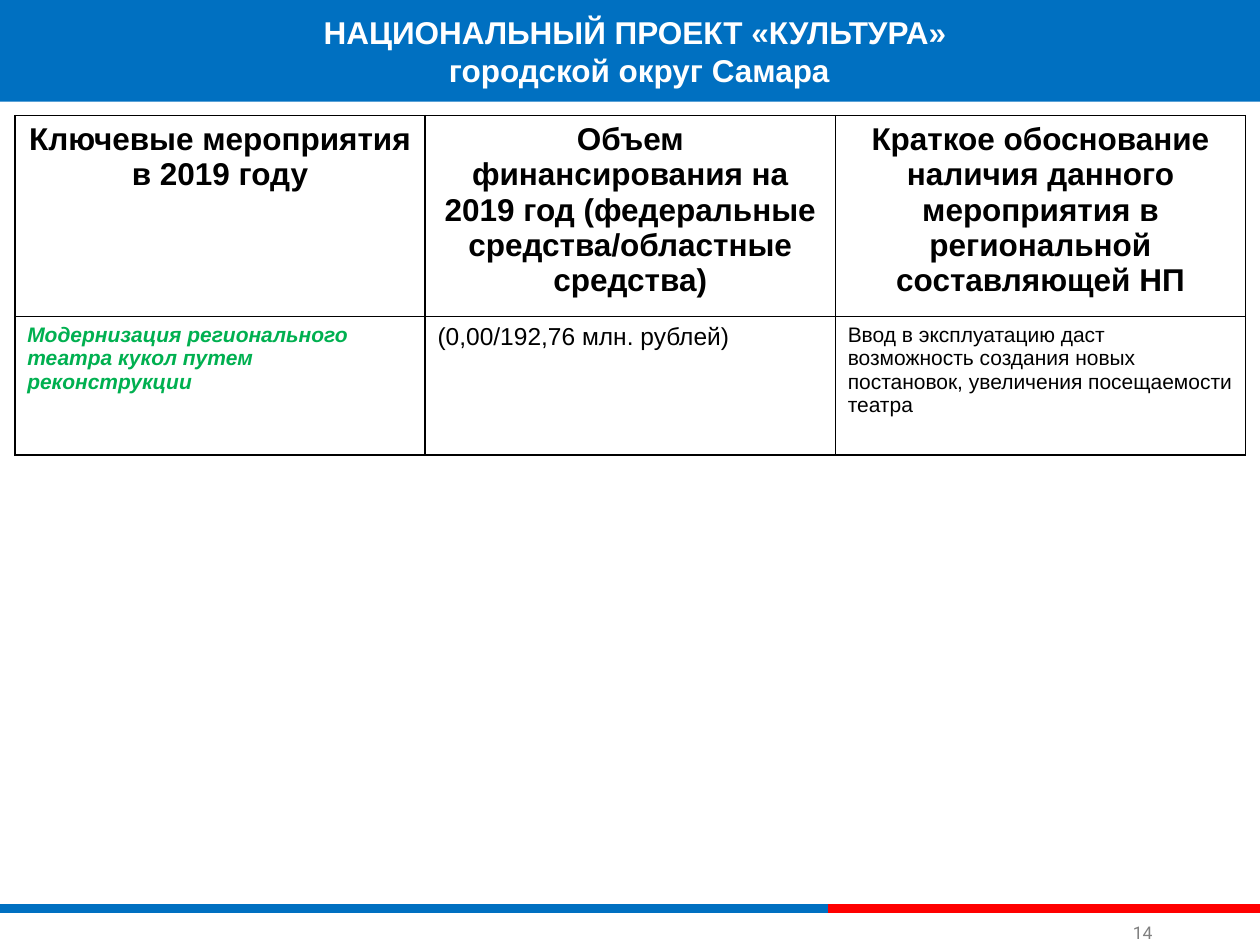
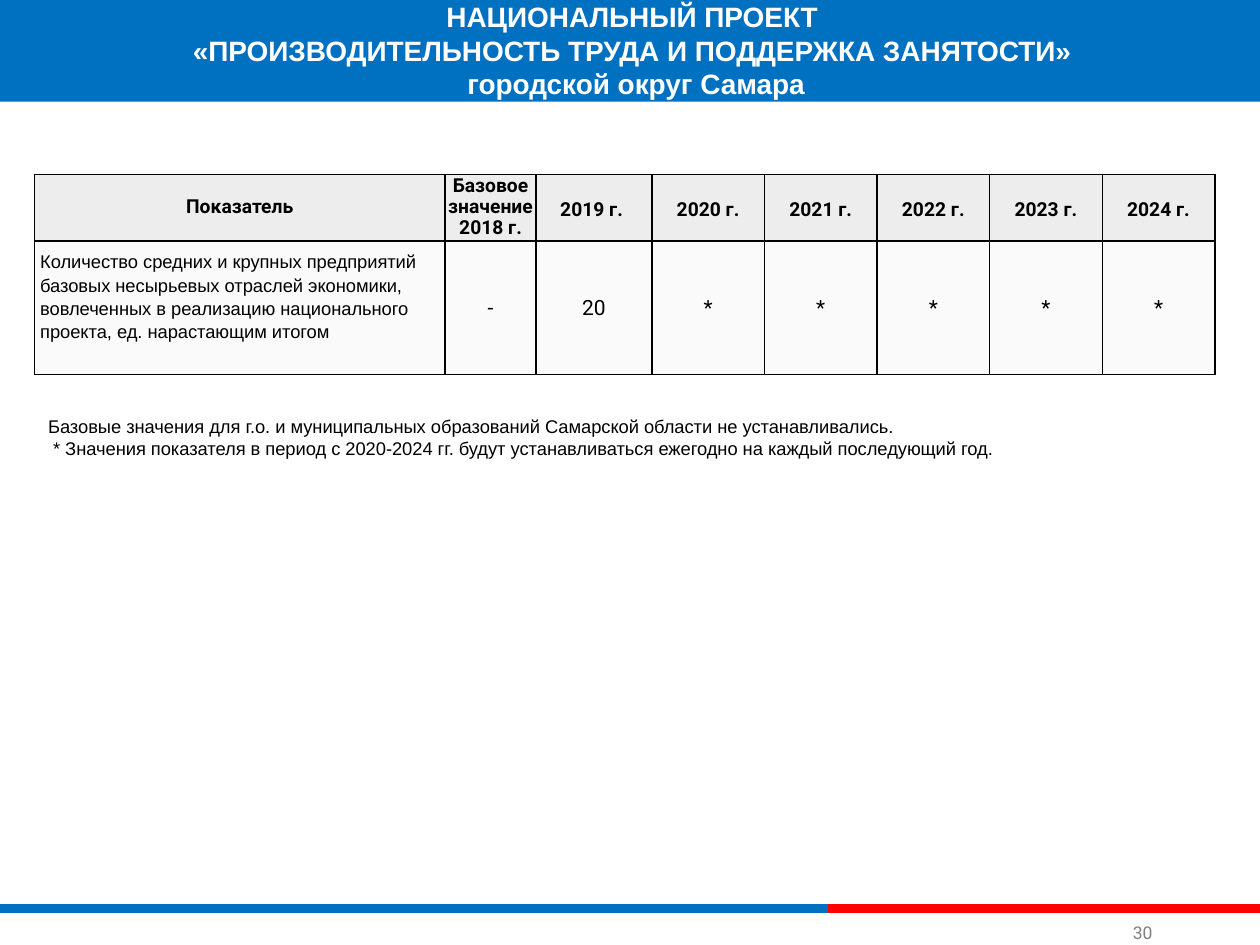
from dataclasses import dataclass
from typing import Optional

from lxml import etree
from pptx import Presentation
from pptx.dml.color import RGBColor
from pptx.enum.shapes import MSO_CONNECTOR, MSO_SHAPE
from pptx.enum.text import MSO_ANCHOR, MSO_AUTO_SIZE, PP_ALIGN
from pptx.oxml.ns import qn
from pptx.util import Cm, Pt

LEFT, CENTER = PP_ALIGN.LEFT, PP_ALIGN.CENTER
TOP, MIDDLE, BOTTOM = MSO_ANCHOR.TOP, MSO_ANCHOR.MIDDLE, MSO_ANCHOR.BOTTOM
NO_AUTOFIT = MSO_AUTO_SIZE.NONE
RECTANGLE, STRAIGHT = MSO_SHAPE.RECTANGLE, MSO_CONNECTOR.STRAIGHT

BLUE, RED, GREEN = "0070C1", "FF0000", "00B050"
BLACK, WHITE, GRAY = "000000", "FFFFFF", "808080"
HEADER_FILL, BODY_FILL = "EDEDED", "F2F2F2"
ARIAL, ROBOTO = "Arial", "Roboto"
SLIDE_WIDTH, SLIDE_HEIGHT = 25.4, 19.05
STRIPE_TOP, STRIPE_SPLIT = 18.31, 16.69


@dataclass
class Box:
    left: float
    top: float
    width: float
    height: float

    def lengths(self) -> tuple:
        return Cm(self.left), Cm(self.top), Cm(self.width), Cm(self.height)


@dataclass
class CellStyle:
    size: float
    font: str = ARIAL
    color: str = BLACK
    bold: bool = False
    italic: bool = False
    align: PP_ALIGN = LEFT
    anchor: MSO_ANCHOR = TOP
    spacing: object = 1.0
    indent: float = 0
    margins: tuple = (0.25, 0.13, 0.25, 0.13)
    fill: Optional[str] = None
    opacity: int = 100


@dataclass
class Cell:
    text: str
    style: CellStyle


def rgb(color: str) -> RGBColor:
    return RGBColor.from_string(color)


def write_text(frame, text: str, *, size: float, font: str = ARIAL, color: str = BLACK,
               bold: bool = False, italic: bool = False, align=LEFT, spacing=1.0,
               indent: float = 0) -> None:
    for index, line in enumerate(text.split("\n")):
        paragraph = frame.add_paragraph() if index else frame.paragraphs[0]
        paragraph.alignment = align
        paragraph.line_spacing = spacing
        paragraph.space_before = Pt(0)
        if indent:
            paragraph._p.get_or_add_pPr().set("marL", str(Cm(indent)))
        run = paragraph.add_run()
        run.text = line
        run.font.name = font
        run.font.size = Pt(size)
        run.font.bold = bold
        run.font.italic = italic
        run.font.color.rgb = rgb(color)


def set_margins(target, margins: tuple) -> None:
    (target.margin_left, target.margin_top,
     target.margin_right, target.margin_bottom) = map(Cm, margins)


def prepare_frame(frame, anchor=TOP) -> None:
    frame.auto_size = NO_AUTOFIT
    frame.word_wrap = False
    frame.vertical_anchor = anchor
    set_margins(frame, (0.13, 0.13, 0.13, 0.13))


def draw_stripe(slide, start: float, end: float, color: str):
    stripe = slide.shapes.add_connector(
        STRAIGHT, Cm(start), Cm(STRIPE_TOP), Cm(end), Cm(STRIPE_TOP))
    stripe.line.color.rgb = rgb(color)
    stripe.line.width = Pt(5)
    etree.SubElement(stripe._element.spPr, qn("a:effectLst"))
    return stripe


def draw_band(slide):
    band = slide.shapes.add_shape(RECTANGLE, *Box(0, -0.08, SLIDE_WIDTH, 2.13).lengths())
    band.shadow.inherit = False
    band.fill.solid()
    band.fill.fore_color.rgb = rgb(BLUE)
    band.line.fill.background()
    return band


def decorate_layout(slide) -> None:
    decorations = [draw_stripe(slide, 0, STRIPE_SPLIT, BLUE),
                   draw_stripe(slide, STRIPE_SPLIT, SLIDE_WIDTH, RED),
                   draw_band(slide)]
    for decoration in decorations:
        slide.slide_layout.shapes._spTree.append(decoration._element)


def add_text(slide, box: Box, text: str, anchor=TOP, **text_format) -> None:
    shape = slide.shapes.add_textbox(*box.lengths())
    prepare_frame(shape.text_frame, anchor)
    write_text(shape.text_frame, text, **text_format)


def add_heading(slide, box: Box, title: str, size: float, number: int) -> None:
    shape = slide.shapes.title
    shape.left, shape.top, shape.width, shape.height = box.lengths()
    prepare_frame(shape.text_frame)
    write_text(shape.text_frame, title, size=size, color=WHITE, bold=True, align=CENTER)
    add_text(slide, Box(22.71, 18.5, 1, 0.64), str(number), BOTTOM,
             size=10, font=ROBOTO, color=GRAY)


def add_borders(cell) -> None:
    properties = cell._tc.get_or_add_tcPr()
    for index, side in enumerate(("lnL", "lnR", "lnT", "lnB")):
        border = etree.Element(qn(f"a:{side}"), w=str(Pt(1)))
        fill = etree.SubElement(border, qn("a:solidFill"))
        etree.SubElement(fill, qn("a:srgbClr"), val=BLACK)
        properties.insert(index, border)


def fill_cell(cell, color: Optional[str], opacity: int) -> None:
    if color is None:
        cell.fill.background()
        return
    cell.fill.solid()
    cell.fill.fore_color.rgb = rgb(color)
    if opacity < 100:
        color_element = cell._tc.tcPr.find(".//" + qn("a:srgbClr"))
        etree.SubElement(color_element, qn("a:alpha"), val=str(opacity * 1000))


def write_cell(cell, content: Cell) -> None:
    style = content.style
    fill_cell(cell, style.fill, style.opacity)
    add_borders(cell)
    cell.vertical_anchor = style.anchor
    set_margins(cell, style.margins)
    write_text(cell.text_frame, content.text, size=style.size, font=style.font,
               color=style.color, bold=style.bold, italic=style.italic,
               align=style.align, spacing=style.spacing, indent=style.indent)


def add_table(slide, left: float, top: float, widths: list[float],
              heights: list[float], rows: list[list[Cell]]) -> None:
    box = Box(left, top, sum(widths), sum(heights))
    table = slide.shapes.add_table(len(rows), len(widths), *box.lengths()).table
    table.first_row = False
    table.horz_banding = False
    for column, width in zip(table.columns, widths):
        column.width = Cm(width)
    for row, height, contents in zip(table.rows, heights, rows):
        row.height = Cm(height)
        for cell, content in zip(row.cells, contents):
            write_cell(cell, content)


def build_culture(slide) -> None:
    add_heading(slide, Box(6.3, 0.13, 13.18, 1.8),
                "НАЦИОНАЛЬНЫЙ ПРОЕКТ «КУЛЬТУРА» \nгородской округ Самара", 18, 14)
    header = CellStyle(18, bold=True, align=CENTER)
    headings = [
        "Ключевые мероприятия в 2019 году",
        "Объем финансирования на 2019 год (федеральные средства/областные средства)",
        "Краткое обоснование наличия данного мероприятия в региональной составляющей НП",
    ]
    event = [
        Cell("Модернизация регионального театра кукол путем реконструкции",
             CellStyle(12, color=GREEN, bold=True, italic=True)),
        Cell("(0,00/192,76 млн. рублей)", CellStyle(14)),
        Cell("Ввод в эксплуатацию даст возможность создания новых постановок, "
             "увеличения посещаемости театра", CellStyle(12)),
    ]
    add_table(slide, 0.3, 2.33, [8.27] * 3, [4.05, 2.79],
              [[Cell(text, header) for text in headings], event])


def build_productivity(slide) -> None:
    add_heading(slide, Box(3.59, -0.14, 18.47, 2.31),
                "НАЦИОНАЛЬНЫЙ ПРОЕКТ \n"
                "«ПРОИЗВОДИТЕЛЬНОСТЬ ТРУДА И ПОДДЕРЖКА ЗАНЯТОСТИ» \n"
                "городской округ Самара", 16, 30)
    header = dict(size=11, font=ROBOTO, bold=True, align=CENTER, anchor=MIDDLE,
                  margins=(0.03, 0, 0.03, 0), fill=HEADER_FILL)
    label_header = CellStyle(spacing=Pt(12), **header)
    year_header = CellStyle(spacing=1.15, **header)
    indicator = CellStyle(10.5, anchor=MIDDLE, spacing=1.15, indent=0.08,
                          margins=(0.03, 0, 0.03, 0.48), fill=BODY_FILL, opacity=36)
    value = CellStyle(12, font=ROBOTO, align=CENTER, anchor=MIDDLE,
                      margins=(0, 0, 0, 0), fill=BODY_FILL, opacity=36)
    years = ["2019 г. "] + [f"{year} г." for year in range(2020, 2025)]
    headings = [Cell(text, label_header) for text in ("Показатель", "Базовое значение 2018 г.")]
    headings += [Cell(text, year_header) for text in years]
    values = [Cell("Количество средних и крупных предприятий базовых несырьевых отраслей "
                   "экономики, вовлеченных в реализацию национального проекта, "
                   "ед. нарастающим итогом", indicator)]
    values += [Cell(text, value) for text in ["-", "20"] + ["*"] * 5]
    add_table(slide, 0.7, 3.52, [8.27, 1.84, 2.33] + [2.27] * 5, [1.34, 2.69],
              [headings, values])
    add_text(slide, Box(0.84, 8.23, 19.81, 1.6),
             "Базовые значения для г.о. и муниципальных образований Самарской области "
             "не устанавливались.\n"
             " * Значения показателя в период с 2020-2024 гг. будут устанавливаться "
             "ежегодно на каждый последующий год.",
             size=10.5)


def main() -> None:
    presentation = Presentation()
    presentation.slide_width = Cm(SLIDE_WIDTH)
    presentation.slide_height = Cm(SLIDE_HEIGHT)
    title_only = presentation.slide_layouts[5]
    culture, productivity = [presentation.slides.add_slide(title_only) for _ in range(2)]
    decorate_layout(culture)
    build_culture(culture)
    build_productivity(productivity)
    presentation.save("out.pptx")


if __name__ == "__main__":
    main()
